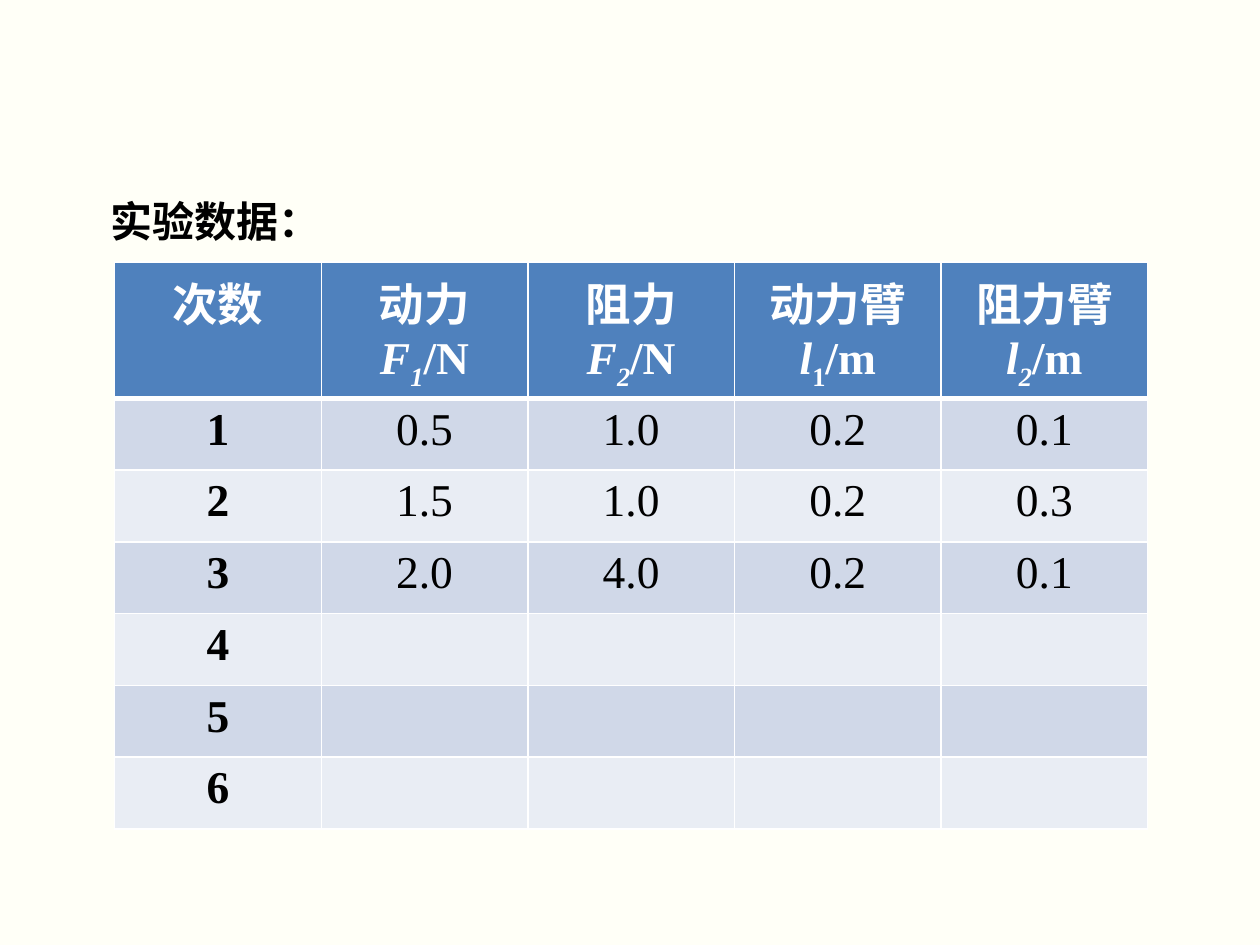
from dataclasses import dataclass

from lxml import etree
from pptx import Presentation
from pptx import util as u
from pptx.dml.color import RGBColor
from pptx.enum import text
from pptx.oxml.ns import qn


@dataclass(frozen=True)
class Theme:
    font: str = "Times New Roman"
    title_size: int = 24
    cell_size: int = 26
    page: str = "FFFFF7"
    ink: str = "000000"
    white: str = "FFFFFF"
    header: str = "4F81BD"
    bands: tuple = ("D0D8E8", "E9EDF4")
    thin: int = 1
    thick: int = 3


@dataclass(frozen=True)
class Run:
    value: str
    italic: bool = False
    sub: bool = False


@dataclass(frozen=True)
class Quantity:
    name: str
    symbol: str
    index: str
    unit: str
    slanted_index: bool = True

    def runs(self) -> list[Run]:
        return [Run(self.name + " "), Run(self.symbol, True),
                Run(self.index, self.slanted_index, True), Run("/" + self.unit)]


THEME = Theme()
QUANTITIES = [
    Quantity("动力", "F", "1", "N"),
    Quantity("阻力", "F", "2", "N"),
    Quantity("动力臂", "l", "1", "m", False),
    Quantity("阻力臂", "l", "2", "m"),
]
TRIALS = [
    ("0.5", "1.0", "0.2", "0.1"),
    ("1.5", "1.0", "0.2", "0.3"),
    ("2.0", "4.0", "0.2", "0.1"),
    ("",) * 4,
    ("",) * 4,
    ("",) * 4,
]
COL_W, HEADER_H, ROW_H = 1.64, 1.03, 0.57


def add_runs(p, runs: list[Run], size: int, color: str, bold: bool) -> None:
    for run in runs:
        r = p.add_run()
        r.text = run.value
        formats = {"name": THEME.font, "size": u.Pt(size), "bold": bold, "italic": run.italic}
        for key, value in formats.items():
            setattr(r.font, key, value)
        r.font.color.rgb = RGBColor.from_string(color)
        if run.sub:
            r.font._element.set("baseline", "-25000")


def set_borders(cell, top: int, bottom: int) -> None:
    tc_pr = cell._tc.get_or_add_tcPr()
    widths = {"lnL": THEME.thin, "lnR": THEME.thin, "lnT": top, "lnB": bottom}
    for tag, width in widths.items():
        ln = etree.SubElement(tc_pr, qn(f"a:{tag}"), w=str(u.Pt(width)))
        fill = etree.SubElement(ln, qn("a:solidFill"))
        etree.SubElement(fill, qn("a:srgbClr"), val=THEME.white)


def draw_cell(cell, runs: list[Run], row: int, bold: bool) -> None:
    header = row == 0
    set_borders(cell, THEME.thick if row == 1 else THEME.thin,
                THEME.thick if header else THEME.thin)
    fill = THEME.header if header else THEME.bands[(row - 1) % 2]
    cell.fill.solid()
    cell.fill.fore_color.rgb = RGBColor.from_string(fill)
    p = cell.text_frame.paragraphs[0]
    p.alignment = text.PP_ALIGN.CENTER
    add_runs(p, runs, THEME.cell_size, THEME.white if header else THEME.ink, bold)


def draw_table(s) -> None:
    rows = [[[Run("次数")]] + [q.runs() for q in QUANTITIES]]
    for number, values in enumerate(TRIALS, 1):
        rows.append([[Run(v)] if v else [] for v in (str(number), *values)])
    n_cols = len(rows[0])
    table = s.shapes.add_table(
        len(rows), n_cols, u.Inches(0.91), u.Inches(2.08),
        u.Inches(COL_W * n_cols), u.Inches(HEADER_H + ROW_H * len(TRIALS))).table
    for col in table.columns:
        col.width = u.Inches(COL_W)
    for i, cells in enumerate(rows):
        table.rows[i].height = u.Inches(ROW_H if i else HEADER_H)
        for j, runs in enumerate(cells):
            draw_cell(table.cell(i, j), runs, i, i == 0 or j == 0)


def draw_title(s) -> None:
    sp = s.shapes.add_textbox(u.Inches(0.78), u.Inches(1.5), u.Inches(1.87), u.Inches(0.5))
    tf = sp.text_frame
    tf.word_wrap = False
    tf.auto_size = text.MSO_AUTO_SIZE.SHAPE_TO_FIT_TEXT
    add_runs(tf.paragraphs[0], [Run("实验数据：")], THEME.title_size, THEME.ink, True)


def main() -> None:
    prs = Presentation()
    prs.slide_width, prs.slide_height = u.Inches(10), u.Inches(7.5)
    s = prs.slides.add_slide(prs.slide_layouts[6])
    s.background.fill.solid()
    s.background.fill.fore_color.rgb = RGBColor.from_string(THEME.page)
    draw_table(s)
    draw_title(s)
    prs.save("out.pptx")


if __name__ == "__main__":
    main()
